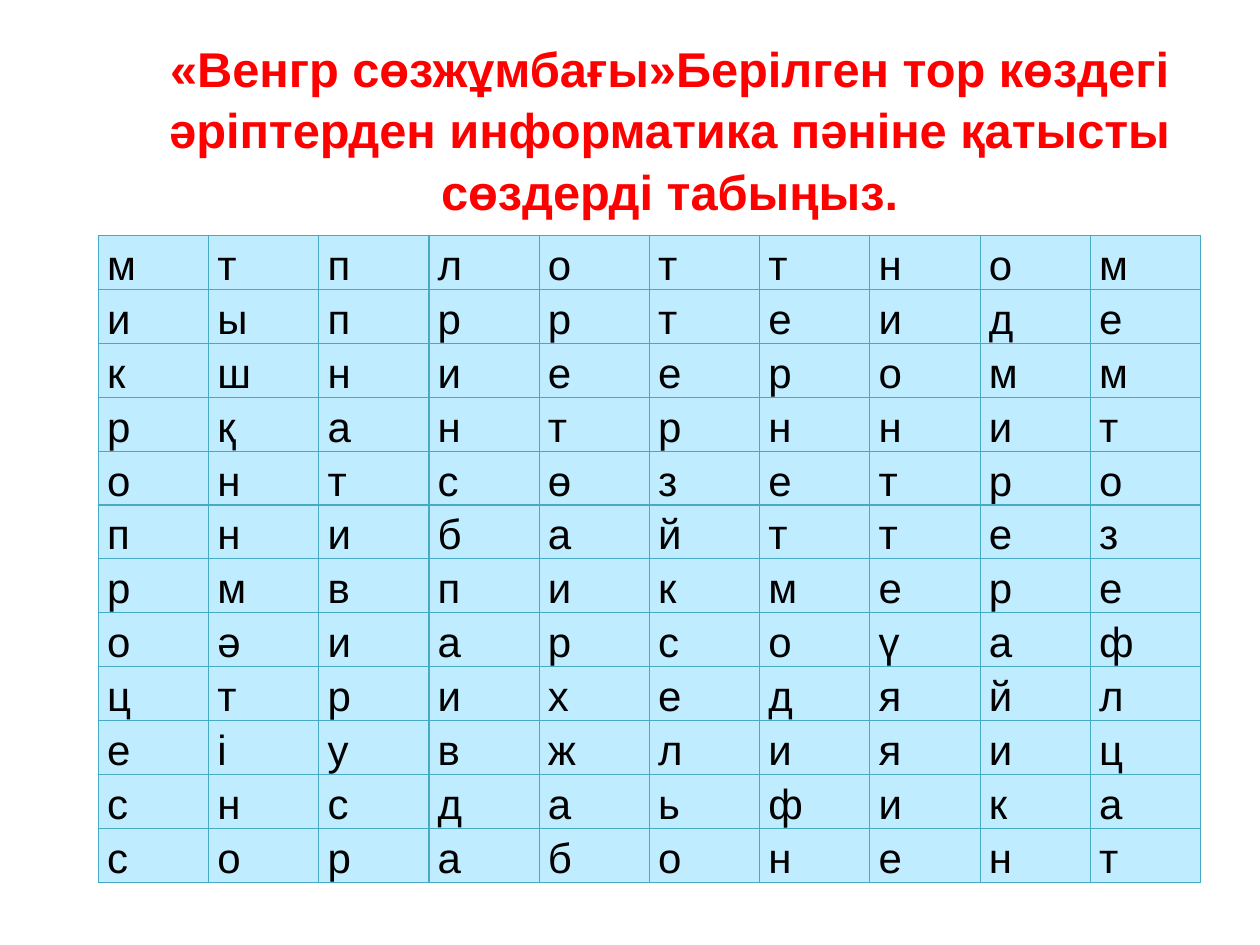
from lxml import etree
from pptx import Presentation
from pptx.dml.color import RGBColor
from pptx.enum.text import MSO_ANCHOR, MSO_AUTO_SIZE, PP_ALIGN
from pptx.oxml.ns import qn
from pptx.util import Inches, Pt

MIDDLE = MSO_ANCHOR.MIDDLE
FIXED = MSO_AUTO_SIZE.NONE
CENTER, JUSTIFY = PP_ALIGN.CENTER, PP_ALIGN.JUSTIFY

TITLE = ("«Венгр сөзжұмбағы»Берілген тор көздегі әріптерден "
         "информатика пәніне қатысты сөздерді табыңыз.")
ROWS = [
    "мтплоттном",
    "иыпрртеиде",
    "кшниеероммм"[:7] + "омм",
    "рқантрннит",
    "онтсөзетро",
    "пнибайттез",
    "рмвпикмере",
    "оәиарсоүаф",
    "цтрихедяйл",
    "еіувжлияиц",
    "снсдаьфика",
    "сорабонент",
]
ROWS[2] = "кшниееромм"
RED, BLACK, AQUA, TEAL = "FF0000", "000000", "BFEDFF", "46AAC5"
WIDTH, HEIGHT = 8.75, 0.38


def color(code):
    return RGBColor.from_string(code)


def style(par, size, code, align, space, bold=False):
    par.alignment = align
    par.line_spacing = space
    font = par.font
    font.name, font.size, font.bold = "Arial", Pt(size), bold
    font.color.rgb = color(code)


def border(cell):
    props = cell._tc.get_or_add_tcPr()
    for i, side in enumerate(("lnL", "lnR", "lnT", "lnB")):
        line = etree.Element(qn("a:" + side), w=str(Pt(0.75)))
        fill = etree.SubElement(line, qn("a:solidFill"))
        etree.SubElement(fill, qn("a:srgbClr"), val=TEAL)
        props.insert(i, line)


def add_title(slide):
    title = slide.shapes.title
    title.left, title.top = Inches(0.86), Inches(0.39)
    title.width, title.height = Inches(8.91), Inches(1.25)
    frame = title.text_frame
    frame.text = TITLE
    frame.word_wrap = True
    frame.auto_size = FIXED
    frame.vertical_anchor = MIDDLE
    style(frame.paragraphs[0], 27.9, RED, CENTER, 1.05, True)


def add_grid(slide):
    count = len(ROWS[0])
    table = slide.shapes.add_table(
        len(ROWS), count, Inches(0.78), Inches(1.87),
        Inches(WIDTH), Inches(HEIGHT * len(ROWS))).table
    table.first_row = table.horz_banding = False
    for r, word in enumerate(ROWS):
        for c, letter in enumerate(word):
            cell = table.cell(r, c)
            cell.text = letter
            cell.margin_left = cell.margin_right = Inches(0.07)
            cell.margin_top = cell.margin_bottom = 0
            cell.fill.solid()
            cell.fill.fore_color.rgb = color(AQUA)
            par = cell.text_frame.paragraphs[0]
            style(par, 24, BLACK, JUSTIFY, 1.15)
            par.space_after = Pt(10)
            border(cell)


def main():
    deck = Presentation()
    deck.slide_width, deck.slide_height = Inches(10), Inches(7.5)
    slide = deck.slides.add_slide(deck.slide_layouts[5])
    add_title(slide)
    add_grid(slide)
    deck.save("out.pptx")


if __name__ == "__main__":
    main()
